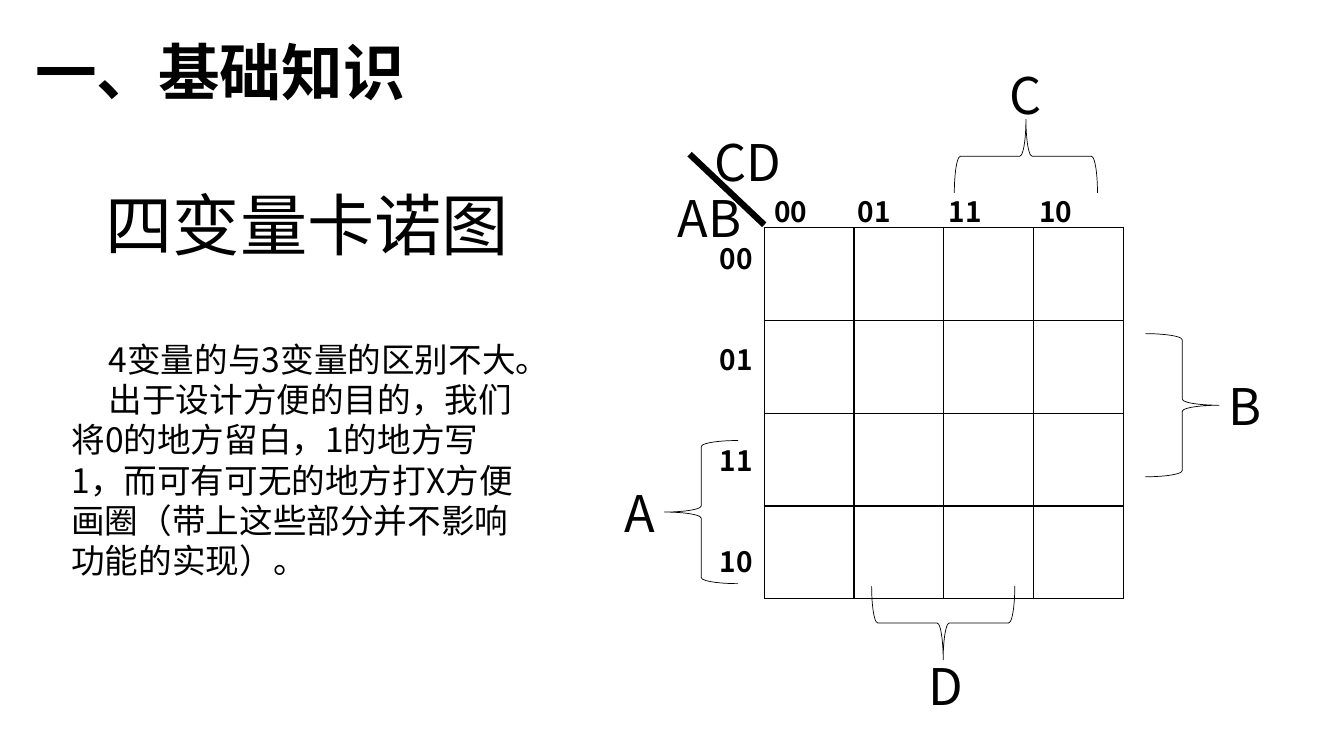
from dataclasses import dataclass

from lxml import etree
from pptx import Presentation
from pptx.dml.color import RGBColor
from pptx.enum.shapes import MSO_CONNECTOR, MSO_SHAPE
from pptx.oxml.ns import qn
from pptx.slide import Slide
from pptx.table import Table
from pptx.text.text import TextFrame
from pptx.util import Inches, Pt

BLACK = RGBColor(0, 0, 0)
FONT = "Noto Sans CJK SC"
BRACE = MSO_SHAPE.LEFT_BRACE
LINE = MSO_CONNECTOR.STRAIGHT
LEFT, TOP = 7.58, 2.26
COUNT, CELL_W, CELL_H = 4, 0.89, 0.92
CODES = ("00", "01", "11", "10")
STOPS = (0.83, 1.73, 2.63)


@dataclass
class Label:
    lines: tuple[str, ...]
    x: float
    y: float
    w: float
    h: float
    size: int
    bold: bool = False
    wrap: bool = False
    gap: float = 0
    indent: float = 0


@dataclass
class Brace:
    x: float
    y: float
    turn: int


LABELS = (
    Label(("一、基础知识",), 0.25, 0.29, 4.22, 0.84, 44, bold=True),
    Label(("四变量卡诺图",), 0.95, 1.77, 4.66, 0.91, 48),
    Label(("4变量的与3变量的区别不大。",
           "出于设计方便的目的，我们将0的地方留白，1的地方写1，"
           "而可有可无的地方打X方便画圈（带上这些部分并不影响功能的实现）。"),
          0.61, 3.31, 4.61, 2.93, 24, wrap=True, indent=0.37),
    Label(("CD",), 6.99, 1.25, 0.94, 0.71, 36),
    Label(("AB",), 6.62, 1.81, 0.85, 0.71, 36),
    Label(CODES, 7.04, 2.35, 0.63, 3.47, 20, bold=True, gap=48),
    Label(("A",), 6.1, 4.73, 0.59, 0.71, 36),
    Label(("B",), 12.09, 3.67, 0.29, 0.71, 36),
    Label(("C",), 9.91, 0.59, 0.7, 0.71, 36),
    Label(("D",), 9.11, 6.45, 0.49, 0.71, 36),
)
HEAD = Label(("\t".join(CODES),), LEFT, 1.88, 3.56, 0.44, 20, bold=True)
BRACES = (
    Brace(6.59, 4.37, 0),
    Brace(9.81, 0.84, 90),
    Brace(11.36, 3.31, 180),
    Brace(8.99, 5.47, 270),
)


def add_label(slide: Slide, label: Label) -> TextFrame:
    box = slide.shapes.add_textbox(
        Inches(label.x), Inches(label.y), Inches(label.w), Inches(label.h))
    frame = box.text_frame
    frame.word_wrap = label.wrap
    for i, line in enumerate(label.lines):
        para = frame.add_paragraph() if i else frame.paragraphs[0]
        if i and label.gap:
            para.space_before = Pt(label.gap)
        if label.indent:
            para._p.get_or_add_pPr().set("indent", str(Inches(label.indent)))
        run = para.add_run()
        run.text = line
        font = run.font
        font.name, font.size, font.bold = FONT, Pt(label.size), label.bold
        font.color.rgb = BLACK
        east = etree.SubElement(run._r.get_or_add_rPr(), qn("a:ea"))
        east.set("typeface", FONT)
    return frame


def add_tabs(frame: TextFrame) -> None:
    props = frame.paragraphs[0]._p.get_or_add_pPr()
    tabs = etree.SubElement(props, qn("a:tabLst"))
    for stop in STOPS:
        etree.SubElement(tabs, qn("a:tab"), pos=str(Inches(stop)), algn="l")


def add_brace(slide: Slide, brace: Brace) -> None:
    shape = slide.shapes.add_shape(
        BRACE, Inches(brace.x), Inches(brace.y), Inches(0.73), Inches(1.42))
    shape.rotation = brace.turn
    shape.shadow.inherit = False
    shape.fill.background()
    shape.line.color.rgb = BLACK
    shape.line.width = Pt(0.5)


def add_grid(slide: Slide) -> Table:
    table = slide.shapes.add_table(
        COUNT, COUNT, Inches(LEFT), Inches(TOP),
        Inches(COUNT * CELL_W), Inches(COUNT * CELL_H)).table
    table.first_row = table.horz_banding = False
    for col in table.columns:
        col.width = Inches(CELL_W)
    for row in table.rows:
        row.height = Inches(CELL_H)
    for cell in table.iter_cells():
        props = cell._tc.get_or_add_tcPr()
        for side in ("lnL", "lnR", "lnT", "lnB"):
            edge = etree.SubElement(props, qn(f"a:{side}"), w=str(Pt(1)))
            fill = etree.SubElement(edge, qn("a:solidFill"))
            etree.SubElement(fill, qn("a:srgbClr"), val=str(BLACK))
        cell.fill.background()
    return table


def add_slash(slide: Slide) -> None:
    slash = slide.shapes.add_connector(
        LINE, Inches(6.84), Inches(1.53), Inches(LEFT), Inches(2.23))
    slash.line.color.rgb = BLACK
    slash.line.width = Pt(4.5)
    etree.SubElement(slash._element.spPr, qn("a:effectLst"))


def main() -> None:
    deck = Presentation()
    deck.slide_width, deck.slide_height = Inches(13.33), Inches(7.5)
    slide = deck.slides.add_slide(deck.slide_layouts[6])

    # Karnaugh map with its corner slash
    add_grid(slide)
    add_slash(slide)

    # Column codes on tab stops
    add_tabs(add_label(slide, HEAD))

    # Variable ranges
    for brace in BRACES:
        add_brace(slide, brace)

    # Title, body text, row codes and variable names
    for label in LABELS:
        add_label(slide, label)

    deck.save("out.pptx")


if __name__ == "__main__":
    main()
